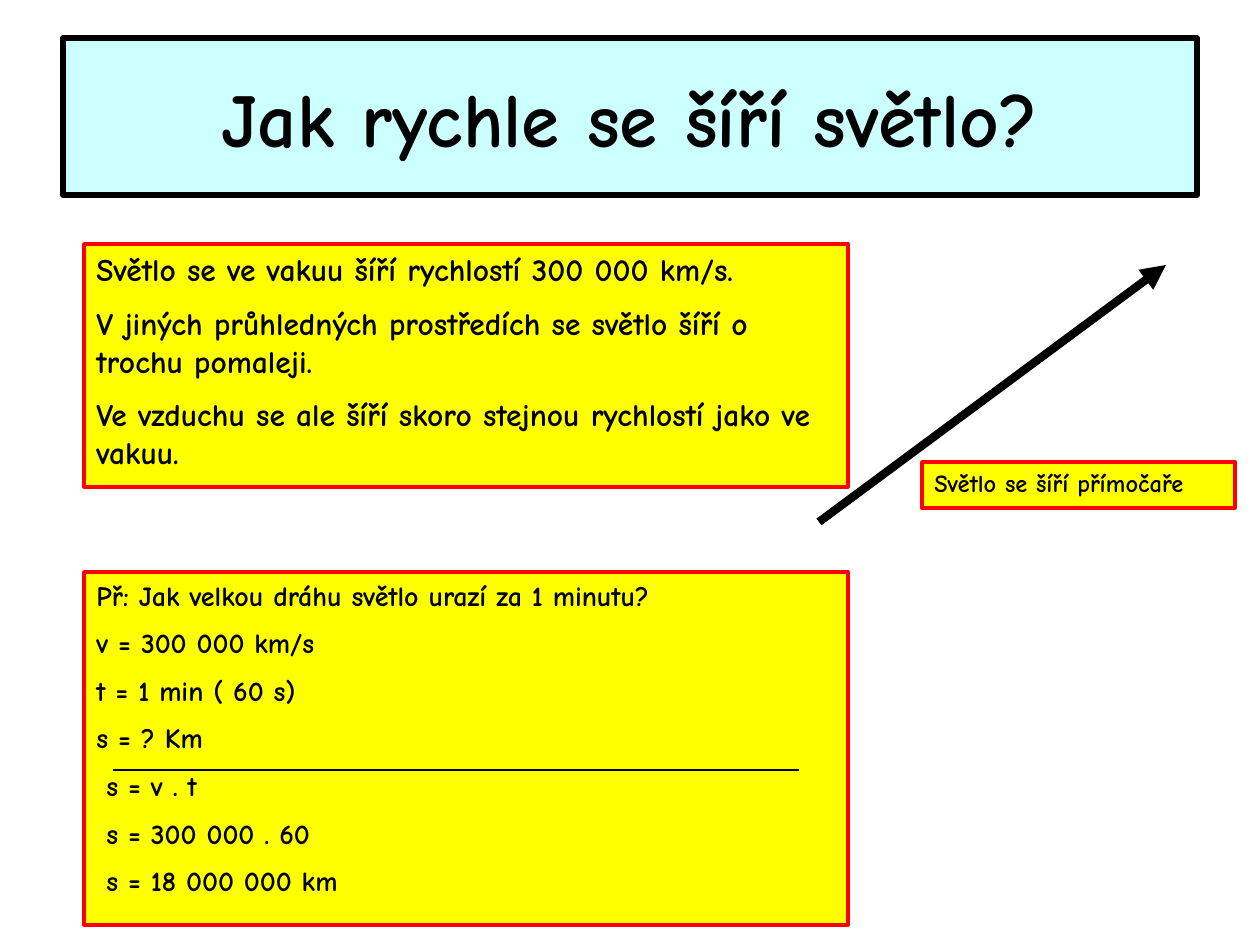
from dataclasses import dataclass

from lxml.etree import SubElement
from pptx import Presentation
from pptx.dml.color import RGBColor
from pptx.enum.shapes import MSO_CONNECTOR
from pptx.enum.text import MSO_ANCHOR, MSO_AUTO_SIZE, PP_ALIGN
from pptx.oxml.ns import qn
from pptx.util import Emu, Pt

PX = 914400 // 126  # EMU per px
SLIDE_SIZE = (1260, 945)


@dataclass(frozen=True)
class Theme:
    font: str = "Comic Neue"
    ink: RGBColor = RGBColor(0, 0, 0)
    title_fill: RGBColor = RGBColor(0xCC, 0xFF, 0xFF)
    note_fill: RGBColor = RGBColor(0xFF, 0xFF, 0)
    note_line: RGBColor = RGBColor(0xFF, 0, 0)
    title_size: int = 44
    title_border: float = 3.25
    note_border: float = 2


THEME = Theme()

TITLE = ("Jak rychle se šíří světlo?", (63, 38, 1134, 157))

# box (left, top, width, height), type size, paragraphs
NOTES = [
    ((84, 244, 764, 243), 18, [
        "Světlo se ve vakuu šíří rychlostí 300 000 km/s.",
        "V jiných průhledných prostředích se světlo šíří o trochu pomaleji.",
        "Ve vzduchu se ale šíří skoro stejnou rychlostí jako ve vakuu.",
    ]),
    ((922, 462, 313, 46), 14, ["Světlo se šíří přímočaře"]),
    ((84, 572, 764, 353), 16, [
        "Př: Jak velkou dráhu světlo urazí za 1 minutu?",
        "v = 300 000 km/s",
        "t = 1 min ( 60 s)",
        "s = ? Km",
        " s = v . t",
        " s = 300 000 . 60",
        " s = 18 000 000 km",
    ]),
]

# start, end, width in points, arrowhead at the end
LIGHT_RAY = ((819, 522), (1166, 265), 4.75, True)
SUM_RULE = ((113, 770), (799, 770), 0.75, False)


def px(*lengths):
    return [Emu(length * PX) for length in lengths]


def style_box(shape, fill, line, border):
    shape.fill.solid()
    shape.fill.fore_color.rgb = fill
    shape.line.color.rgb = line
    shape.line.width = Pt(border)


def style_paragraph(paragraph, size, align):
    paragraph.alignment = align
    for run in paragraph.runs:
        run.font.name = THEME.font
        run.font.size = Pt(size)
        run.font.bold = True
        run.font.color.rgb = THEME.ink


def fill_title(shape, text, box):
    shape.left, shape.top, shape.width, shape.height = px(*box)
    style_box(shape, THEME.title_fill, THEME.ink, THEME.title_border)
    shape.text_frame.text = text
    shape.text_frame.vertical_anchor = MSO_ANCHOR.MIDDLE
    style_paragraph(shape.text_frame.paragraphs[0], THEME.title_size, PP_ALIGN.CENTER)


def add_note(slide, box, size, lines):
    shape = slide.shapes.add_textbox(*px(*box))
    style_box(shape, THEME.note_fill, THEME.note_line, THEME.note_border)
    frame = shape.text_frame
    frame.word_wrap = True
    frame.auto_size = MSO_AUTO_SIZE.SHAPE_TO_FIT_TEXT
    frame.text = "\n".join(lines)
    for paragraph in frame.paragraphs:
        paragraph.space_before = Pt(size / 2)
        style_paragraph(paragraph, size, PP_ALIGN.LEFT)


def add_line(slide, start, end, width, arrow):
    connector = slide.shapes.add_connector(MSO_CONNECTOR.STRAIGHT, *px(*start, *end))
    connector.line.color.rgb = THEME.ink
    connector.line.width = Pt(width)
    if arrow:
        SubElement(connector.line._get_or_add_ln(), qn("a:tailEnd"), type="triangle")
    SubElement(connector._element.spPr, qn("a:effectLst"))


def main():
    presentation = Presentation()
    presentation.slide_width, presentation.slide_height = px(*SLIDE_SIZE)
    slide = presentation.slides.add_slide(presentation.slide_layouts[5])
    facts, ray_label, example = NOTES

    fill_title(slide.shapes.title, *TITLE)
    add_note(slide, *facts)
    add_line(slide, *LIGHT_RAY)
    add_note(slide, *ray_label)
    add_note(slide, *example)
    add_line(slide, *SUM_RULE)
    presentation.save("out.pptx")


if __name__ == "__main__":
    main()
